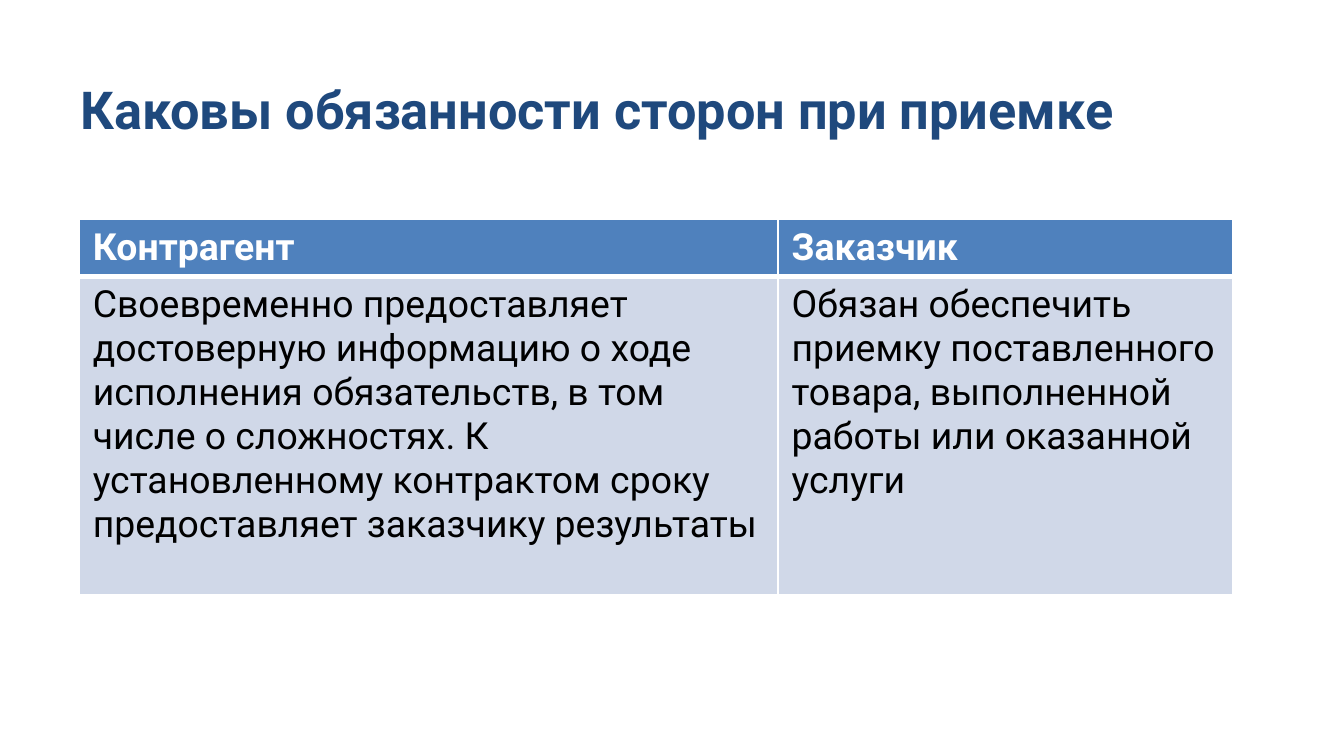
from dataclasses import dataclass

from lxml.etree import SubElement
from pptx import Presentation
from pptx.dml.color import RGBColor
from pptx.enum.text import MSO_ANCHOR, PP_ALIGN
from pptx.oxml.ns import qn
from pptx.util import Inches, Pt


@dataclass(frozen=True)
class Theme:
    font: str = "Roboto"
    navy: str = "1F497D"
    blue: str = "4F81BD"
    pale: str = "D0D8E8"
    white: str = "FFFFFF"
    black: str = "000000"
    head: int = 28
    body: int = 20
    thin: int = 1
    thick: int = 3


THEME = Theme()
TITLE = "Каковы обязанности сторон при приемке"
ROWS = [
    ["Контрагент", "Заказчик"],
    [
        "Своевременно предоставляет достоверную информацию о ходе "
        "исполнения обязательств, в том числе о сложностях. К установленному "
        "контрактом сроку предоставляет заказчику результаты",
        "Обязан обеспечить приемку поставленного товара, выполненной работы "
        "или оказанной услуги",
    ],
]


def write(frame, text, size=THEME.body, color=THEME.black, bold=False):
    para = frame.paragraphs[0]
    para.alignment = PP_ALIGN.LEFT
    run = para.add_run()
    run.text = text
    run.font.name = THEME.font
    run.font.size = Pt(size)
    run.font.bold = bold
    run.font.color.rgb = RGBColor.from_string(color)


def edge(cell, side, width):
    props = cell._tc.get_or_add_tcPr()
    line = SubElement(props, qn(f"a:ln{side}"), w=str(Pt(width)))
    fill = SubElement(line, qn("a:solidFill"))
    SubElement(fill, qn("a:srgbClr"), val=THEME.white)


def add_title(slide, left, top, width, height):
    title = slide.shapes.title
    title.left, title.top = Inches(left), Inches(top)
    title.width, title.height = Inches(width), Inches(height)
    title.text_frame.vertical_anchor = MSO_ANCHOR.MIDDLE
    write(title.text_frame, TITLE, size=THEME.head, color=THEME.navy, bold=True)


def add_duties(slide, left, top, widths, heights):
    box = [Inches(n) for n in (left, top, sum(widths), sum(heights))]
    table = slide.shapes.add_table(len(ROWS), len(widths), *box).table
    table.horz_banding = False
    for col, width in zip(table.columns, widths):
        col.width = Inches(width)
    for row, height in zip(table.rows, heights):
        row.height = Inches(height)
    for i, row in enumerate(ROWS):
        first = i == 0
        wide = "B" if first else "T"
        for j, text in enumerate(row):
            cell = table.cell(i, j)
            for side in "LRTB":
                edge(cell, side, THEME.thick if side == wide else THEME.thin)
            cell.fill.solid()
            shade = THEME.blue if first else THEME.pale
            cell.fill.fore_color.rgb = RGBColor.from_string(shade)
            color = THEME.white if first else THEME.black
            write(cell.text_frame, text, color=color, bold=first)


def main():
    deck = Presentation()
    deck.slide_width = Inches(10)
    deck.slide_height = deck.slide_width * 9 // 16
    slide = deck.slides.add_slide(deck.slide_layouts[5])
    add_title(slide, 0.5, 0.45, 9, 0.71)
    add_duties(slide, 0.59, 1.63, widths=[5.2, 3.38], heights=[0.42, 2.37])
    deck.save("out.pptx")


if __name__ == "__main__":
    main()
